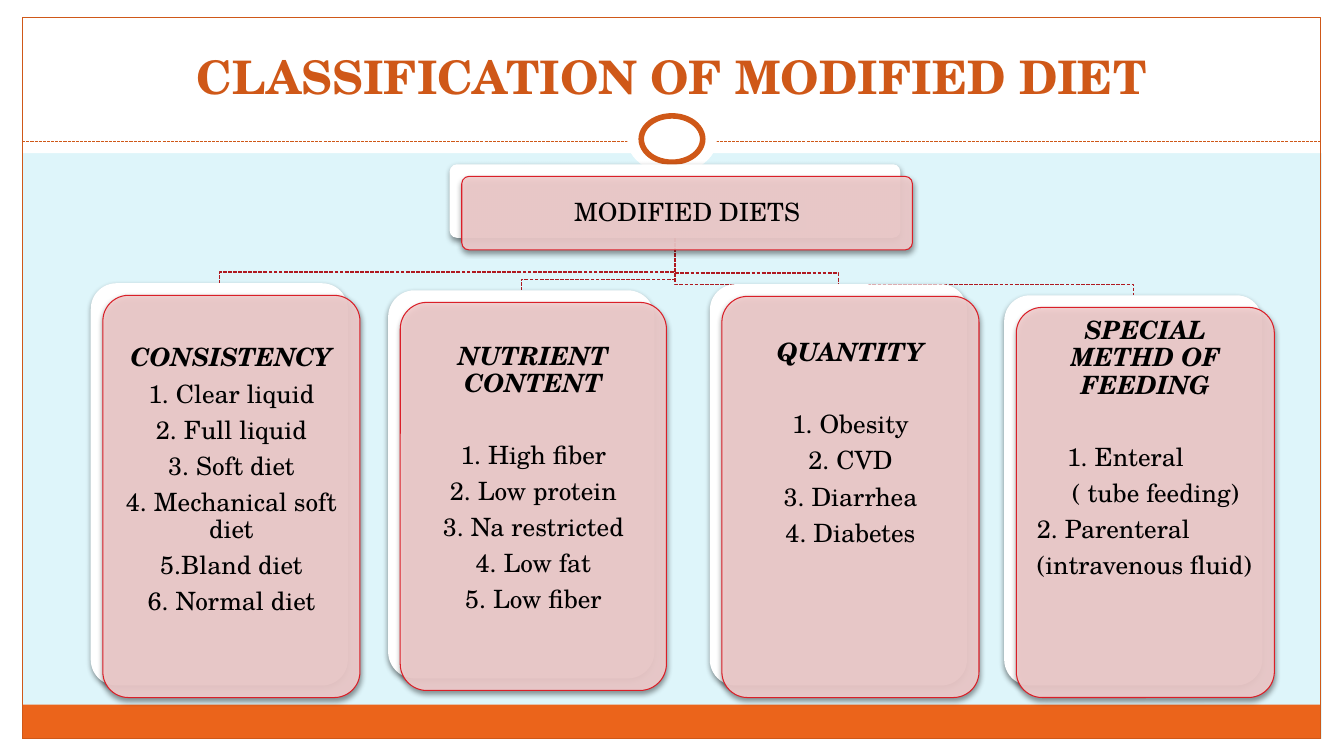
from lxml import etree
from pptx import Presentation
from pptx.dml.color import RGBColor
from pptx.enum.dml import MSO_LINE
from pptx.enum.shapes import MSO_CONNECTOR, MSO_SHAPE
from pptx.enum.text import MSO_ANCHOR, PP_ALIGN
from pptx.oxml.ns import qn
from pptx.util import Inches, Pt

RECT, OVAL, ROUND = MSO_SHAPE.RECTANGLE, MSO_SHAPE.OVAL, MSO_SHAPE.ROUNDED_RECTANGLE
CENTER, LEFT = PP_ALIGN.CENTER, PP_ALIGN.LEFT
TOP, MIDDLE, BOTTOM = MSO_ANCHOR.TOP, MSO_ANCHOR.MIDDLE, MSO_ANCHOR.BOTTOM
DASH = MSO_LINE.SQUARE_DOT  # sysDash in the file
FONT = "TeX Gyre Schola"
COLORS = {
    "sky": "DEF5FA", "white": "FFFFFF", "band": "EB641B", "rust": "CF5818",
    "pink": "F1CDCD", "red": "DA1F28", "branch": "AF1920", "black": "000000",
}


def add_box(kind, x, y, w, h, fill=None, line=None, width=0.75, shadow=False):
    sp = s.shapes.add_shape(kind, Inches(x), Inches(y), Inches(w), Inches(h))
    sp.shadow.inherit = False
    if fill:
        sp.fill.solid()
        sp.fill.fore_color.rgb = RGBColor.from_string(COLORS[fill])
    else:
        sp.fill.background()
    if line:
        sp.line.color.rgb = RGBColor.from_string(COLORS[line])
        sp.line.width = Pt(width)
    else:
        sp.line.fill.background()
    if kind == ROUND:
        sp.adjustments[0] = 0.1
    if shadow:
        effects = sp._element.spPr.find(qn("a:effectLst"))
        outer = etree.SubElement(effects, qn("a:outerShdw"), blurRad=str(Pt(4)),
                                 dist=str(Pt(2)), dir="5400000", rotWithShape="0")
        black = etree.SubElement(outer, qn("a:srgbClr"), val=COLORS["black"])
        etree.SubElement(black, qn("a:alpha"), val="45000")
    return sp


def add_run(p, text, size=18, color="black", bold=False, italic=False):
    r = p.add_run()
    r.text = text
    r.font.name, r.font.size = FONT, Pt(size)
    r.font.bold, r.font.italic = bold, italic
    r.font.color.rgb = RGBColor.from_string(COLORS[color])


prs = Presentation()
prs.slide_width, prs.slide_height = Inches(13.33), Inches(7.5)
s = prs.slides.add_slide(prs.slide_layouts[6])
s.background.fill.solid()
s.background.fill.fore_color.rgb = RGBColor.from_string(COLORS["sky"])

# Margins, footer band and frame
for x, y, w, h in [(0, 7.33, 13.33, 0.17), (0, 0, 13.33, 1.52),
                   (0, 0, 0.22, 7.5), (13.11, 0, 0.22, 7.5)]:
    add_box(RECT, x, y, w, h, "white")
add_box(RECT, 0.22, 6.99, 12.88, 0.34, "band")
add_box(RECT, 0.22, 0.17, 12.88, 7.16, line="rust")

# Dashed rule with ring
rule = s.shapes.add_connector(MSO_CONNECTOR.STRAIGHT, Inches(0.22), Inches(1.4),
                              Inches(13.1), Inches(1.4))
rule.line.color.rgb = RGBColor.from_string(COLORS["rust"])
rule.line.width = Pt(0.75)
rule.line.dash_style = DASH
etree.SubElement(rule._element.spPr, qn("a:effectLst"))
add_box(OVAL, 6.22, 1.05, 0.89, 0.67, "white")
add_box(OVAL, 6.36, 1.15, 0.61, 0.46, "white", "rust", 4)

# Title
title = s.shapes.add_textbox(Inches(0.44), Inches(0.25), Inches(12.44), Inches(0.83))
tf = title.text_frame
tf.word_wrap = True
tf.vertical_anchor = BOTTOM
tf.paragraphs[0].alignment = CENTER
add_run(tf.paragraphs[0], "CLASSIFICATION OF MODIFIED DIET", 33, "rust", bold=True)

# Cards: x, y, w, h, top inset, gap after heading, heading, items (text, left indent)
ROOT = (4.46, 1.63, 4.47, 0.73, 0.07, 0, "MODIFIED DIETS", [])
CLASSES = [
    (0.9, 2.81, 2.55, 3.99, 0.42, 6.3, "CONSISTENCY",
     [("1. Clear liquid", None), ("2. Full liquid", None), ("3. Soft diet", None),
      ("4. Mechanical soft diet", None), ("5.Bland diet", None), ("6. Normal diet", None)]),
    (3.85, 2.88, 2.64, 3.85, 0.33, 32, "NUTRIENT CONTENT",
     [("1. High fiber", None), ("2. Low protein", None), ("3. Na restricted", None),
      ("4. Low fat", None), ("5. Low fiber", None)]),
    (7.04, 2.82, 2.55, 3.98, 0.36, 32, "QUANTITY",
     [("1. Obesity", None), ("2. CVD", None), ("3. Diarrhea", None), ("4. Diabetes", None)]),
    (9.96, 2.93, 2.56, 3.87, 0.03, 32, "SPECIAL METHD OF FEEDING",
     [("1. Enteral", 0.36), ("( tube feeding)", 0.41),
      ("2. Parenteral", 0.06), ("(intravenous fluid)", 0.06)]),
]
OFFSET = 0.12  # front panel against back panel

# Branches from the root to each class
root_x, root_y = ROOT[0] + ROOT[2] / 2, ROOT[1] + ROOT[3]
for x, y, w, *rest in reversed(CLASSES):
    end_x, bend_y = x + w / 2, y - 0.11
    fb = s.shapes.build_freeform(Inches(root_x), Inches(root_y))
    fb.add_line_segments([(Inches(root_x), Inches(bend_y)), (Inches(end_x), Inches(bend_y)),
                          (Inches(end_x), Inches(y))], close=False)
    branch = fb.convert_to_shape()
    branch.shadow.inherit = False
    branch.fill.background()
    branch.line.color.rgb = RGBColor.from_string(COLORS["branch"])
    branch.line.width = Pt(0.9)
    branch.line.dash_style = DASH

# Panels with their text
for x, y, w, h, inset, gap, heading, items in [ROOT] + CLASSES:
    add_box(ROUND, x, y, w, h, "white", shadow=True)
    card = add_box(ROUND, x + OFFSET, y + OFFSET, w, h, "pink", "red", shadow=True)
    tint = card._element.spPr.find(qn("a:solidFill"))[0]
    etree.SubElement(tint, qn("a:alpha"), val="90000")
    tf = card.text_frame
    tf.word_wrap = True
    tf.vertical_anchor = TOP if items else MIDDLE
    tf.margin_left = tf.margin_right = tf.margin_bottom = Inches(0.07)
    tf.margin_top = Inches(inset)
    p = tf.paragraphs[0]
    p.alignment, p.line_spacing, p.space_after = CENTER, 0.9, Pt(gap)
    add_run(p, heading, bold=bool(items), italic=bool(items))
    for text, indent in items:
        p = tf.add_paragraph()
        p.alignment, p.line_spacing, p.space_after = CENTER, 0.9, Pt(6.3)
        if indent is not None:
            p.alignment = LEFT
            p._p.get_or_add_pPr().set("marL", str(Inches(indent)))
        add_run(p, text)

prs.save("out.pptx")
